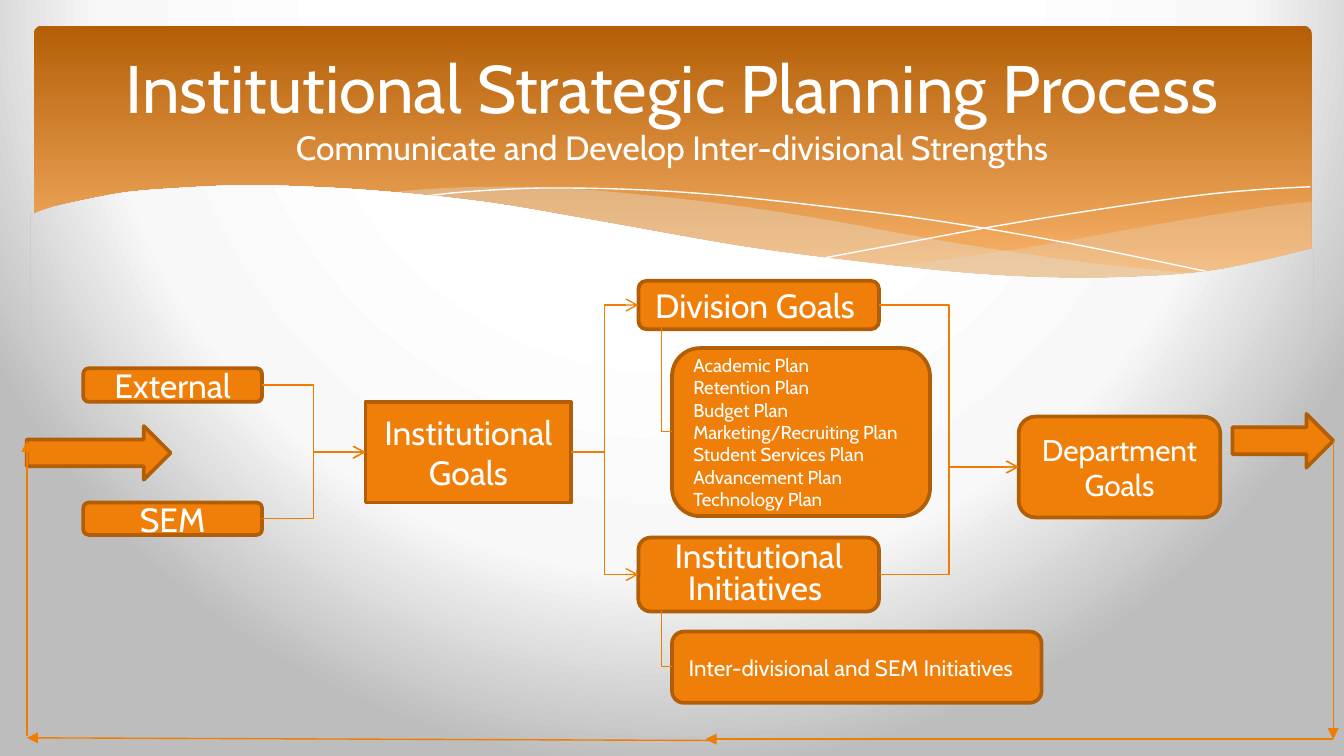
from pptx import Presentation
from pptx.dml.color import RGBColor
from pptx.enum.shapes import MSO_CONNECTOR, MSO_SHAPE
from pptx.enum.text import MSO_ANCHOR, PP_ALIGN
from pptx.oxml import parse_xml
from pptx.oxml.ns import nsdecls, qn
from pptx.util import Inches, Pt
from lxml.etree import SubElement

FONT = "Cabin"
WHITE = RGBColor(0xFF, 0xFF, 0xFF)
ORANGE = RGBColor(0xF0, 0x7F, 0x09)
DARK_ORANGE = RGBColor(0xB2, 0x5E, 0x07)
CONNECTOR_ORANGE = RGBColor(0xF0, 0x7C, 0x03)
SAND = RGBColor(0xE3, 0xDE, 0xD1)

# Content
TITLE = [("Institutional Strategic Planning Process", 36),
         ("Communicate and Develop Inter-divisional Strengths", 18)]
PLANS = ["Academic Plan", "Retention Plan", "Budget Plan", "Marketing/Recruiting Plan",
         "Student Services Plan", "Advancement Plan", "Technology Plan"]
ROUND, RECTANGLE, ARROW = (MSO_SHAPE.ROUNDED_RECTANGLE, MSO_SHAPE.RECTANGLE,
                           MSO_SHAPE.RIGHT_ARROW)
CENTER, LEFT = PP_ALIGN.CENTER, PP_ALIGN.LEFT

# name: (preset, (left, top, width, height), lines, size, alignment, line spacing)
BOXES = {
    "external": (ROUND, (0.62, 2.74, 1.33, 0.25), ["External"], 18, CENTER, 1),
    "sem": (ROUND, (0.62, 3.74, 1.33, 0.24), ["SEM"], 18, CENTER, 1),
    "institution": (RECTANGLE, (2.72, 2.99, 1.53, 0.75), ["Institutional Goals"], 18, CENTER, 1),
    "initiatives": (ROUND, (4.75, 4, 1.79, 0.55), ["Institutional Initiatives "], 18, CENTER, 0.8),
    "division": (ROUND, (4.75, 2.09, 1.79, 0.36), ["Division Goals "], 18, CENTER, 1),
    "department": (ROUND, (7.58, 3.1, 1.5, 0.75), ["Department Goals"], 16, CENTER, 1),
    "plans": (ROUND, (5, 2.59, 1.92, 1.25), PLANS, 10, LEFT, 1),
    "arrow out": (ARROW, (9.17, 3.08, 0.75, 0.4), [], 18, CENTER, 1),
    "arrow in": (ARROW, (0.2, 3.17, 1.07, 0.4), [], 18, CENTER, 1),
    "joint": (ROUND, (5, 4.7, 2.75, 0.53), ["Inter-divisional and SEM Initiatives"], 12, LEFT, 1),
}
FLOWS = [("external", "institution"), ("sem", "institution"),
         ("institution", "division"), ("institution", "initiatives"),
         ("division", "department"), ("initiatives", "department")]
BRANCHES = [((5, 3.21), (4.92, 2.38)), ((5, 4.96), (4.92, 4.55))]
FEEDBACK = [((9.92, 3.28), (9.92, 5.5)), ((9.92, 5.5), (5.25, 5.5)),
            ((5.33, 5.51), (0.2, 5.49)), ((0.2, 5.48), (0.2, 3.28))]

# Banner waves: each outline is a chain of smooth edges
RIGHT_WAVE = [
    [(9.76, 1.5), (9.35, 1.55), (8.61, 1.67), (7.53, 1.86), (6.61, 1.99)],
    [(6.61, 1.99), (7.19, 2.04), (7.81, 2.08), (8.35, 2.08), (8.81, 2.05),
     (9.21, 1.99), (9.49, 1.93), (9.76, 1.85)]]
MIDDLE_WAVE = [
    [(8.93, 2.04), (8.07, 1.95), (7.06, 1.8), (6.29, 1.66), (5.55, 1.54), (4.89, 1.46),
     (4.2, 1.4), (3.61, 1.39), (3.13, 1.41), (2.86, 1.44)],
    [(2.86, 1.44), (3.42, 1.49), (4.04, 1.58), (4.91, 1.74), (5.66, 1.86), (6.34, 1.96),
     (6.95, 2.03), (7.61, 2.08), (8.28, 2.09), (8.93, 2.04)]]
FALLING_LINE = [[(3.09, 1.47), (3.44, 1.43), (4.01, 1.4), (4.69, 1.41), (5.33, 1.45),
                 (6.08, 1.53), (6.95, 1.64), (7.95, 1.81), (9.07, 2.04)]]
RISING_LINE = [[(6.13, 1.92), (6.72, 1.81), (7.48, 1.67), (8.36, 1.53), (8.95, 1.45),
                (9.38, 1.41), (9.75, 1.39)]]
LOWER_EDGE = [
    [(9.77, 1.85), (9.4, 1.94), (8.99, 2.02), (8.5, 2.06), (7.93, 2.07), (7.26, 2.04),
     (6.48, 1.96), (5.55, 1.84), (4.47, 1.65), (3.65, 1.51), (2.92, 1.43), (2.3, 1.39),
     (1.77, 1.38), (1.32, 1.4), (0.95, 1.43), (0.67, 1.48), (0.4, 1.54), (0.23, 1.6)],
    [(0.23, 2.47), (9.77, 2.47)]]

PAGE_STOPS = [(40, "FFFFFF"), (74, "F8F8F8"), (100, "BDBDBD")]
PAGE_DIRECTION = ('<a:path path="circle"><a:fillToRect l="20000" t="-40000" '
                  'r="20000" b="140000"/></a:path>')
BANNER_STOPS = [(0, "B45F07"), (90, "F9B268")]
BANNER_DIRECTION = '<a:lin ang="5400000" scaled="0"/>'


def set_gradient(fill, element, stops, direction):
    fill.gradient()
    old = element.find(".//" + qn("a:gradFill"))
    stop_xml = "".join(f'<a:gs pos="{position * 1000}"><a:srgbClr val="{color}"/></a:gs>'
                       for position, color in stops)
    new = parse_xml(f'<a:gradFill {nsdecls("a")} rotWithShape="1">'
                    f'<a:gsLst>{stop_xml}</a:gsLst>{direction}</a:gradFill>')
    old.getparent().replace(old, new)


def smooth(points, steps=4):
    """Catmull-Rom curve through the points."""
    if len(points) < 3:
        return points
    padded = [points[0], *points, points[-1]]
    curve = []
    for a, b, c, d in zip(padded, padded[1:], padded[2:], padded[3:]):
        for step in range(steps):
            t = step / steps
            curve.append(tuple(
                q + t / 2 * (r - p + t * (2 * p - 5 * q + 4 * r - s + t * (3 * (q - r) + s - p)))
                for p, q, r, s in zip(a, b, c, d)))
    return curve + [points[-1]]


def add_outline(edges, close=True):
    points = [(Inches(x), Inches(y)) for edge in edges for x, y in smooth(edge)]
    builder = slide.shapes.build_freeform(*points[0])
    builder.add_line_segments(points[1:], close=close)
    shape = builder.convert_to_shape()
    shape.shadow.inherit = False
    shape.line.fill.background()
    return shape


def add_wave(edges, opacity):
    shape = add_outline(edges)
    shape.fill.solid()
    shape.fill.fore_color.rgb = SAND
    color = shape._element.spPr.find(qn("a:solidFill")).find(qn("a:srgbClr"))
    SubElement(color, qn("a:alpha")).set("val", str(opacity * 1000))


def add_box(preset, bounds, lines, size, alignment, spacing):
    shape = slide.shapes.add_shape(preset, *map(Inches, bounds))
    shape.shadow.inherit = False
    shape.fill.solid()
    shape.fill.fore_color.rgb = ORANGE
    shape.line.color.rgb = DARK_ORANGE
    shape.line.width = Pt(2)
    frame = shape.text_frame
    frame.word_wrap = True
    frame.vertical_anchor = MSO_ANCHOR.MIDDLE
    if lines:
        frame.text = "\n".join(lines)
        for paragraph in frame.paragraphs:
            paragraph.alignment = alignment
            paragraph.line_spacing = spacing
            style_font(paragraph.font, size)
    return shape


def style_font(font, size):
    font.name = FONT
    font.size = Pt(size)
    font.color.rgb = WHITE


def add_link(kind, start=(0, 0), end=(0, 0), head=None):
    link = slide.shapes.add_connector(kind, *map(Inches, (*start, *end)))
    link.line.color.rgb = CONNECTOR_ORANGE
    link.line.width = Pt(0.75)
    if head:
        SubElement(link.line._get_or_add_ln(), qn("a:tailEnd")).set("type", head)
    SubElement(link._element.spPr, qn("a:effectLst"))
    return link


# Widescreen page, 16 to 9
presentation = Presentation()
presentation.slide_width = Inches(10)
presentation.slide_height = Inches(10) * 9 // 16
slide = presentation.slides.add_slide(presentation.slide_layouts[6])
set_gradient(slide.background.fill, slide._element, PAGE_STOPS, PAGE_DIRECTION)

# Banner
banner = slide.shapes.add_shape(ROUND, *map(Inches, (0.25, 0.19, 9.51, 2.02)))
banner.adjustments[0] = 0.03
banner.shadow.inherit = False
banner.line.fill.background()
set_gradient(banner.fill, banner._element, BANNER_STOPS, BANNER_DIRECTION)
add_wave(RIGHT_WAVE, 29)
add_wave(MIDDLE_WAVE, 40)
for edges in (FALLING_LINE, RISING_LINE):
    ribbon = add_outline(edges, close=False)
    ribbon.fill.background()
    ribbon.line.color.rgb = WHITE
    ribbon.line.width = Pt(0)

# The lower edge shows the page background through the banner
lower_edge = add_outline(LOWER_EDGE)
lower_edge._element.set("useBgFill", "1")

# Title
title = slide.shapes.add_textbox(*map(Inches, (0.5, 0.28, 9, 1.03))).text_frame
title.word_wrap = True
title.vertical_anchor = MSO_ANCHOR.MIDDLE
heading = title.paragraphs[0]
heading.alignment = CENTER
for index, (text, size) in enumerate(TITLE):
    if index:
        heading.add_line_break()
    run = heading.add_run()
    run.text = text
    style_font(run.font, size)

# Boxes and the links between them
boxes = {name: add_box(*box) for name, box in BOXES.items()}
for source, target in FLOWS:
    flow = add_link(MSO_CONNECTOR.ELBOW, head="arrow")
    flow.begin_connect(boxes[source], 3)
    flow.end_connect(boxes[target], 1)
for start, end in BRANCHES:
    branch = add_link(MSO_CONNECTOR.ELBOW, start, end)
    branch._element.spPr.find(qn("a:prstGeom")).set("prst", "bentConnector2")

# Feedback loop
for start, end in FEEDBACK:
    add_link(MSO_CONNECTOR.STRAIGHT, start, end, head="triangle")

presentation.save("out.pptx")
